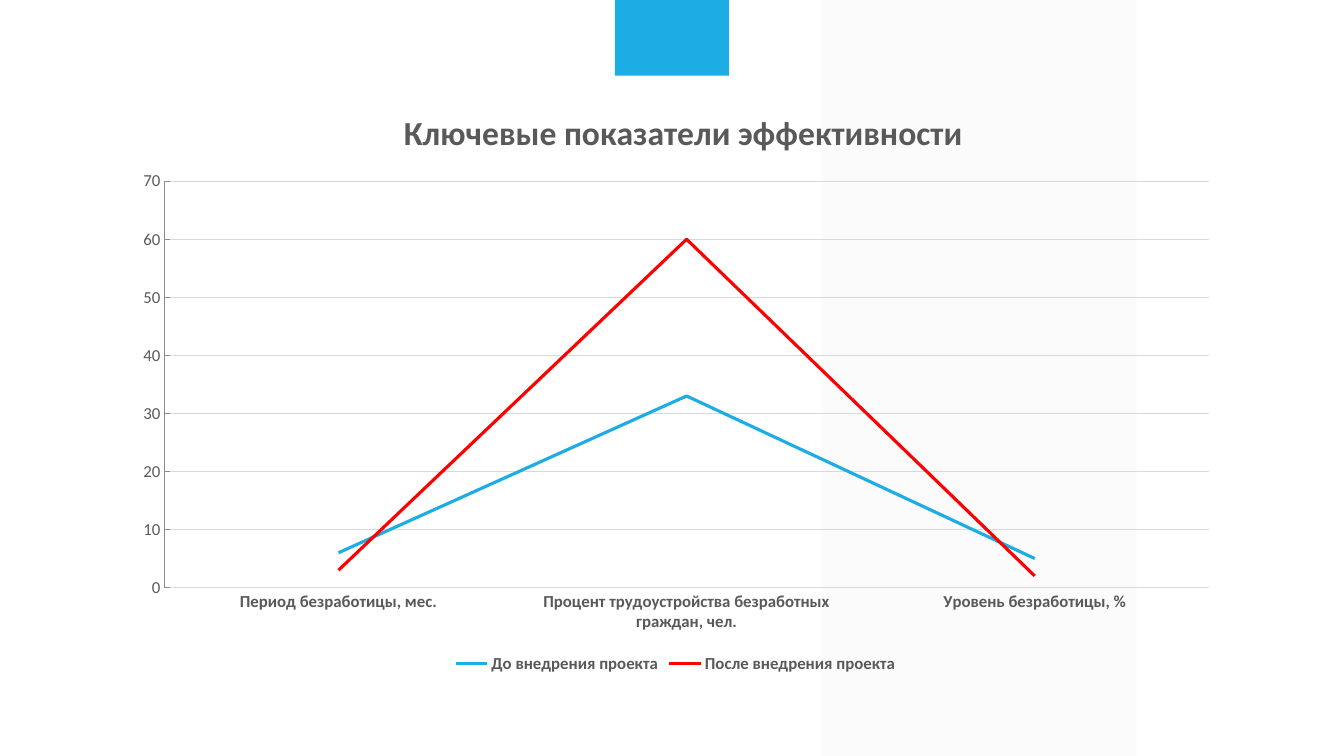
from lxml import etree
from pptx import Presentation
from pptx.chart.data import CategoryChartData
from pptx.dml.color import RGBColor
from pptx.enum.chart import XL_CHART_TYPE, XL_LEGEND_POSITION, XL_TICK_MARK
from pptx.enum.shapes import MSO_SHAPE
from pptx.oxml.ns import qn
from pptx.util import Inches, Pt

LINE = XL_CHART_TYPE.LINE
BOTTOM = XL_LEGEND_POSITION.BOTTOM
NONE, INSIDE = XL_TICK_MARK.NONE, XL_TICK_MARK.INSIDE
SLANT, RECT = MSO_SHAPE.PARALLELOGRAM, MSO_SHAPE.RECTANGLE

FONT = "Calibri"
BLUE, RED, GRAY, GRID, AXIS = "1CADE4", "FF0000", "595959", "D9D9D9", "8C8C8C"
TITLE = "Ключевые показатели эффективности"
GROUPS = [
    "Период безработицы, мес.",
    "Процент трудоустройства безработных граждан, чел.",
    "Уровень безработицы, %",
]
SERIES = [
    ("До внедрения проекта", (6, 33, 5), BLUE),
    ("После внедрения проекта", (3, 60, 2), RED),
]
BOLD = {"name": FONT, "size": Pt(12), "bold": True}
PLAIN = {**BOLD, "bold": False}
HEAD = {**BOLD, "size": Pt(24)}


def paint(color, code):
    color.rgb = RGBColor.from_string(code)


def apply(item, values):
    for name, value in values.items():
        setattr(item, name, value)


def style(font, values):
    apply(font, values)
    paint(font.color, GRAY)


def stroke(line, code, width):
    line.width = Pt(width)
    paint(line.color, code)


def add_block(slide, kind, box, code, alpha=None):
    block = slide.shapes.add_shape(kind, *map(Inches, box))
    block.shadow.inherit = False
    block.fill.solid()
    paint(block.fill.fore_color, code)
    block.line.fill.background()
    if alpha is not None:
        tint = block.fill._xPr.find(".//" + qn("a:srgbClr"))
        etree.SubElement(tint, qn("a:alpha")).set("val", str(alpha * 1000))
    return block


def place(parent, before, values):
    layout = parent.find(qn("c:layout"))
    if layout is None:
        layout = etree.Element(qn("c:layout"))
        parent.find(qn(before)).addprevious(layout)
    for child in list(layout):
        layout.remove(child)
    manual = etree.SubElement(layout, qn("c:manualLayout"))
    for name, value in values.items():
        etree.SubElement(manual, qn("c:" + name)).set("val", str(value))


def set_axis(axis, tick, font, code):
    apply(axis, {"major_tick_mark": tick, "minor_tick_mark": NONE})
    style(axis.tick_labels.font, font)
    stroke(axis.format.line, code, 0.75)


def add_title(chart):
    chart.has_title = True
    frame = chart.chart_title.text_frame
    frame.text = TITLE
    style(frame.paragraphs[0].runs[0].font, HEAD)
    chart.chart_title.include_in_layout = False
    place(chart.chart_title._element, "c:overlay",
          {"xMode": "edge", "yMode": "edge", "x": 0.25, "y": 0.04})


def add_graph(slide, box):
    data = CategoryChartData()
    data.categories = GROUPS
    for name, values, _ in SERIES:
        data.add_series(name, values)
    chart = slide.shapes.add_chart(LINE, *map(Inches, box), data).chart
    style(chart.font, PLAIN)
    add_title(chart)
    chart.has_legend = True
    apply(chart.legend, {"position": BOTTOM, "include_in_layout": False})
    style(chart.legend.font, BOLD)
    set_axis(chart.category_axis, NONE, BOLD, GRID)
    scale = chart.value_axis
    set_axis(scale, INSIDE, PLAIN, AXIS)
    apply(scale, {"minimum_scale": 0, "maximum_scale": 70, "major_unit": 10})
    stroke(scale.major_gridlines.format.line, GRID, 0.75)
    chart.plots[0].vary_by_categories = False
    for series, (_, _, code) in zip(chart.plots[0].series, SERIES):
        series.smooth = False
        stroke(series.format.line, code, 2.25)
    area = chart._chartSpace.find(".//" + qn("c:plotArea"))
    place(area, "c:lineChart",
          {"layoutTarget": "inner", "xMode": "edge", "yMode": "edge",
           "x": 0.04, "y": 0.17, "w": 0.94, "h": 0.68})


def main():
    deck = Presentation()
    apply(deck, {"slide_width": Inches(13.33), "slide_height": Inches(7.5)})
    slide = deck.slides.add_slide(deck.slide_layouts[6])
    band = add_block(slide, SLANT, (8.15, 0, 3.12, 7.5), "F2F2F2", 30)
    band.adjustments[0] = 0
    add_block(slide, RECT, (6.1, 0, 1.13, 0.75), BLUE)
    add_graph(slide, (1.19, 0.79, 11.02, 5.93))
    deck.save("out.pptx")


if __name__ == "__main__":
    main()
